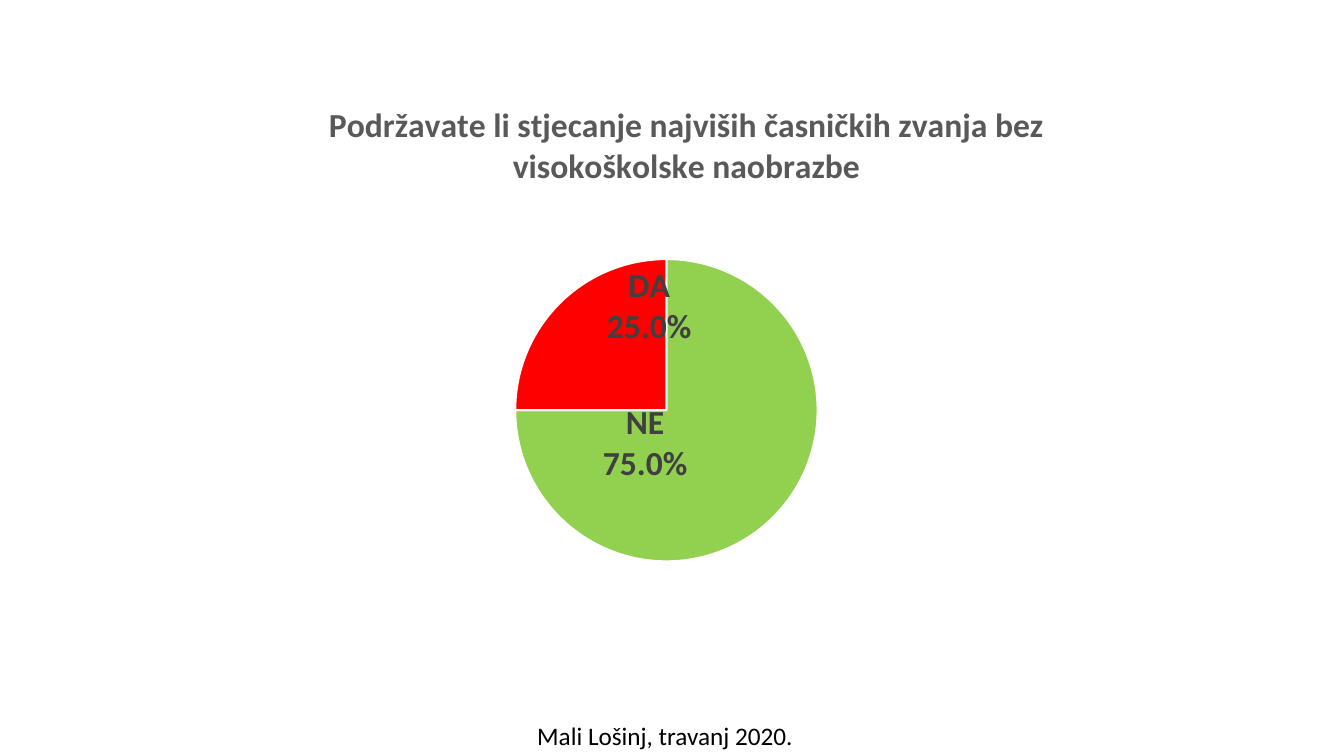
from dataclasses import dataclass

from lxml import etree
from pptx import Presentation
from pptx.chart.data import CategoryChartData
from pptx.dml.color import RGBColor
from pptx.enum import chart as charts, text as texts
from pptx.oxml.ns import qn
from pptx.util import Inches, Pt


@dataclass(frozen=True)
class Theme:
    font: str = "Calibri"
    heading: str = "595959"
    label: str = "404040"
    ink: str = "000000"
    white: str = "FFFFFF"
    no: str = "92D050"
    yes: str = "FF0000"
    large: int = 24
    small: int = 18
    tiny: int = 10


THEME = Theme()
# answer text, share, colour, label offset as a fraction of the chart
ANSWERS = [
    ("NE\n75.0%", 0.75, THEME.no, (-0.072, -0.034)),
    ("DA\n25.0%", 0.25, THEME.yes, (0.035, -0.088)),
]


def rgb(code):
    return RGBColor.from_string(code)


def style_font(font, size, color, bold=False):
    font.name, font.size, font.bold = THEME.font, Pt(size), bold
    font.color.rgb = rgb(color)


def write_text(frame, content, align=None, **style):
    """Write each line of content as a paragraph in one format."""
    for number, line in enumerate(content.split("\n")):
        paragraph = frame.add_paragraph() if number else frame.paragraphs[0]
        paragraph.alignment = align
        run = paragraph.add_run()
        run.text = line
        style_font(run.font, **style)


def set_layout(parent, position, **settings):
    """Place a chart part by fractions of the chart area."""
    for old in parent.findall(qn("c:layout")):
        parent.remove(old)
    layout = etree.Element(qn("c:layout"))
    manual = etree.SubElement(layout, qn("c:manualLayout"))
    for tag, value in settings.items():
        etree.SubElement(manual, qn(f"c:{tag}")).set("val", str(value))
    parent.insert(position, layout)


def color_slice(point, color):
    point.format.fill.solid()
    point.format.fill.fore_color.rgb = rgb(color)
    point.format.line.color.rgb = rgb(THEME.white)
    point.format.line.width = Pt(1.5)


def label_slice(point, content, offset):
    label = point.data_label
    write_text(label.text_frame, content, size=THEME.large, color=THEME.label, bold=True)
    label.position = charts.XL_LABEL_POSITION.CENTER
    dx, dy = offset
    set_layout(label._dLbl, 1, x=dx, y=dy)


def add_survey_pie(slide):
    survey = CategoryChartData(number_format="0.0%")
    survey.categories = ["1", "2"]
    survey.add_series("Series 1", [share for _, share, _, _ in ANSWERS])
    pie = slide.shapes.add_chart(
        charts.XL_CHART_TYPE.PIE,
        Inches(1.45), Inches(0.67), Inches(10.31), Inches(5.62), survey,
    ).chart
    style_font(pie.font, THEME.tiny, THEME.ink)
    pie.has_legend = False
    pie.has_title = True
    write_text(
        pie.chart_title.text_frame,
        "Podržavate li stjecanje najviših časničkih zvanja bez visokoškolske naobrazbe",
        align=texts.PP_ALIGN.CENTER, size=THEME.large, color=THEME.heading, bold=True,
    )
    pie.chart_title.include_in_layout = False
    set_layout(pie.chart_title._element, 1, xMode="edge", yMode="edge", x=0.17, y=0.05)
    set_layout(
        pie._chartSpace.chart.plotArea, 0, layoutTarget="inner",
        xMode="edge", yMode="edge", x=0.355, y=0.338, w=0.291, h=0.534,
    )

    plot = pie.plots[0]
    plot.vary_by_categories = True
    shares = plot.series[0]
    labels = shares.data_labels
    labels.show_value = True
    labels.number_format, labels.number_format_is_linked = "0.0%", False
    style_font(labels.font, THEME.large, THEME.label, bold=True)
    for index, (content, _, color, offset) in enumerate(ANSWERS):
        point = shares.points[index]
        color_slice(point, color)
        label_slice(point, content, offset)


def add_place_and_date(slide):
    footer = slide.shapes.add_textbox(Inches(5.23), Inches(7.1), Inches(2.76), Inches(0.4))
    frame = footer.text_frame
    frame.word_wrap = False
    frame.auto_size = texts.MSO_AUTO_SIZE.SHAPE_TO_FIT_TEXT
    write_text(frame, "Mali Lošinj, travanj 2020.", size=THEME.small, color=THEME.ink)


def main():
    deck = Presentation()
    deck.slide_width, deck.slide_height = Inches(13.33), Inches(7.5)
    slide = deck.slides.add_slide(deck.slide_layouts[6])
    add_survey_pie(slide)
    add_place_and_date(slide)
    deck.save("out.pptx")


if __name__ == "__main__":
    main()
